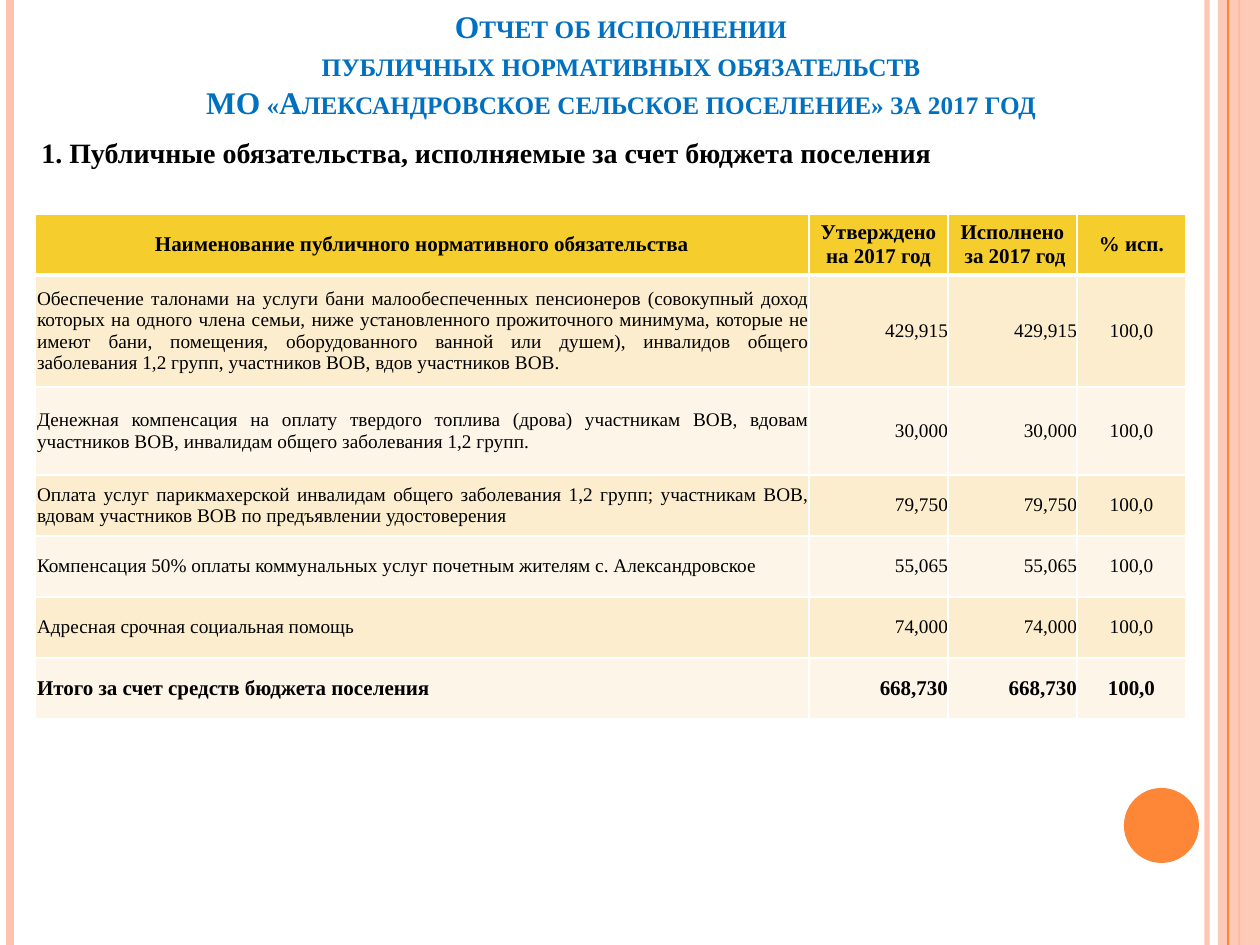
from dataclasses import dataclass

from lxml.etree import SubElement
from pptx import Presentation
from pptx.dml.color import RGBColor
from pptx.enum.shapes import MSO_CONNECTOR, MSO_SHAPE
from pptx.enum.text import MSO_ANCHOR, PP_ALIGN
from pptx.oxml.ns import qn
from pptx.util import Emu, Pt

WHITE = RGBColor(0xFF, 0xFF, 0xFF)
BLACK = RGBColor(0, 0, 0)
BLUE = RGBColor(0x00, 0x70, 0xC0)
PINK = RGBColor(0xFE, 0xC3, 0xAE)
ORANGE = RGBColor(0xFE, 0x86, 0x37)
GOLD = RGBColor(0xF5, 0xCD, 0x2D)
SAND = RGBColor(0xFB, 0xED, 0xCD)
CREAM = RGBColor(0xFD, 0xF6, 0xE8)
FONT = "Times New Roman"
WIDE, HIGH = 1260, 945


def px(n: int) -> Emu:
    return Emu(round(n * 914400 / 126))


@dataclass
class Stripe:
    x: int
    color: RGBColor
    width: float
    alpha: int = 100


@dataclass
class Plate:
    kind: MSO_SHAPE
    box: tuple[int, int, int, int]
    color: RGBColor
    alpha: int = 100


@dataclass
class Note:
    text: str
    box: tuple[int, int, int, int]
    size: int
    color: RGBColor
    align: PP_ALIGN
    frame: dict
    lead: float | None = None
    caps: bool = False


@dataclass
class Row:
    texts: tuple[str, ...]
    high: int
    size: int = 11
    bold: bool = False


DECOR = [
    Stripe(1207, PINK, 3, 93),
    Stripe(10, PINK, 4.5),
    Stripe(1239, ORANGE, 1.5),
    Plate(MSO_SHAPE.RECTANGLE, (1218, 0, 42, HIGH), PINK, 87),
    Stripe(1228, ORANGE, 0.75),
    Plate(MSO_SHAPE.OVAL, (1124, 788, 75, 75), ORANGE),
]
NOTES = [
    Note("Отчет об исполнении\vпубличных нормативных обязательств\v"
         "МО «Александровское сельское поселение» за 2017 год",
         (54, 45, 1134, 118), 18, BLUE, PP_ALIGN.CENTER,
         {"vertical_anchor": MSO_ANCHOR.BOTTOM, "margin_bottom": px(42)}, 21.7, True),
    Note("1. Публичные обязательства, исполняемые за счет бюджета поселения",
         (29, 129, 1203, 798), 16, BLACK, PP_ALIGN.LEFT,
         {"vertical_anchor": MSO_ANCHOR.TOP}),
]
COLS = (774, 139, 129, 109)
ROWS = [
    Row(("Наименование публичного нормативного обязательства",
         "Утверждено на 2017 год", "Исполнено\n за 2017 год", "% исп."), 61, 12, True),
    Row(("Обеспечение талонами на услуги бани малообеспеченных пенсионеров "
         "(совокупный доход которых на одного члена семьи, ниже установленного "
         "прожиточного минимума, которые не имеют бани, помещения, оборудованного "
         "ванной или душем), инвалидов общего заболевания 1,2 групп, участников ВОВ, "
         "вдов участников ВОВ.", "429,915", "429,915", "100,0"), 112),
    Row(("Денежная компенсация на оплату твердого топлива (дрова) участникам ВОВ, "
         "вдовам участников ВОВ, инвалидам общего заболевания 1,2 групп.",
         "30,000", "30,000", "100,0"), 88),
    Row(("Оплата услуг парикмахерской инвалидам общего заболевания 1,2 групп; "
         "участникам ВОВ, вдовам участников ВОВ по предъявлении удостоверения",
         "79,750", "79,750", "100,0"), 61),
    Row(("Компенсация 50% оплаты коммунальных услуг почетным жителям "
         "с. Александровское", "55,065", "55,065", "100,0"), 61),
    Row(("Адресная срочная социальная помощь", "74,000", "74,000", "100,0"), 61),
    Row(("Итого за счет средств бюджета поселения",
         "668,730", "668,730", "100,0"), 61, 12, True),
]
ALIGNS = (PP_ALIGN.JUSTIFY, PP_ALIGN.RIGHT, PP_ALIGN.RIGHT, PP_ALIGN.CENTER)


def assign(item, values: dict) -> None:
    for name, value in values.items():
        setattr(item, name, value)


def style(para, size: int, color: RGBColor, bold: bool, align: PP_ALIGN) -> None:
    para.alignment = align
    for run in para.runs:
        assign(run.font, {"name": FONT, "size": Pt(size), "bold": bold})
        run.font.color.rgb = color


def fade(shape, alpha: int) -> None:
    """Set the opacity, in percent, of the first colour of a shape."""
    if alpha < 100:
        tone = next(shape._element.spPr.iter(qn("a:srgbClr")))
        SubElement(tone, qn("a:alpha"), val=str(alpha * 1000))


def draw_stripe(slide, item: Stripe) -> None:
    line = slide.shapes.add_connector(
        MSO_CONNECTOR.STRAIGHT, px(item.x), 0, px(item.x), px(HIGH))
    line.line.color.rgb = item.color
    line.line.width = Pt(item.width)
    SubElement(line._element.spPr, qn("a:effectLst"))
    fade(line, item.alpha)


def draw_plate(slide, item: Plate) -> None:
    shape = slide.shapes.add_shape(item.kind, *map(px, item.box))
    shape.shadow.inherit = False
    shape.fill.solid()
    shape.fill.fore_color.rgb = item.color
    shape.line.fill.background()
    fade(shape, item.alpha)


def draw_note(slide, note: Note) -> None:
    frame = slide.shapes.add_textbox(*map(px, note.box)).text_frame
    assign(frame, {"word_wrap": True, **note.frame})
    frame.text = note.text
    para = frame.paragraphs[0]
    style(para, note.size, note.color, True, note.align)
    if note.lead:
        para.line_spacing = Pt(note.lead)
    if note.caps:
        for run in para.runs:
            run.font._element.set("cap", "small")


def edge(cell, low: int) -> None:
    """Give a cell white borders, the bottom one low points wide."""
    props = cell._tc.get_or_add_tcPr()
    for spot, (side, width) in enumerate(zip("LRTB", (1, 1, 1, low))):
        line = SubElement(props, qn(f"a:ln{side}"), w=str(Pt(width)))
        fill = SubElement(line, qn("a:solidFill"))
        SubElement(fill, qn("a:srgbClr"), val=str(WHITE))
        props.insert(spot, line)


def draw_table(slide) -> None:
    total = sum(row.high for row in ROWS)
    table = slide.shapes.add_table(
        len(ROWS), len(COLS), px(35), px(214), px(sum(COLS)), px(total)).table
    assign(table, {"first_row": False, "horz_banding": False})
    for col, wide in zip(table.columns, COLS):
        col.width = px(wide)
    for r, row in enumerate(ROWS):
        table.rows[r].height = px(row.high)
        head = r == 0
        tone = GOLD if head else (CREAM, SAND)[r % 2]
        for c, text in enumerate(row.texts):
            cell = table.cell(r, c)
            left = 9 if head else 2 if c == 0 else 0
            assign(cell, {
                "text": text, "vertical_anchor": MSO_ANCHOR.MIDDLE,
                "margin_left": px(left), "margin_right": px(9 if head else 0),
                "margin_top": 0, "margin_bottom": 0})
            cell.fill.solid()
            cell.fill.fore_color.rgb = tone
            edge(cell, 3 if head else 1)
            align = PP_ALIGN.CENTER if head else ALIGNS[c]
            for para in cell.text_frame.paragraphs:
                style(para, row.size, BLACK, row.bold, align)


def main() -> None:
    deck = Presentation()
    assign(deck, {"slide_width": px(WIDE), "slide_height": px(HIGH)})
    slide = deck.slides.add_slide(deck.slide_layouts[6])
    for item in DECOR:
        draw = draw_stripe if isinstance(item, Stripe) else draw_plate
        draw(slide, item)
    for note in NOTES:
        draw_note(slide, note)
    draw_table(slide)
    deck.save("out.pptx")


if __name__ == "__main__":
    main()
